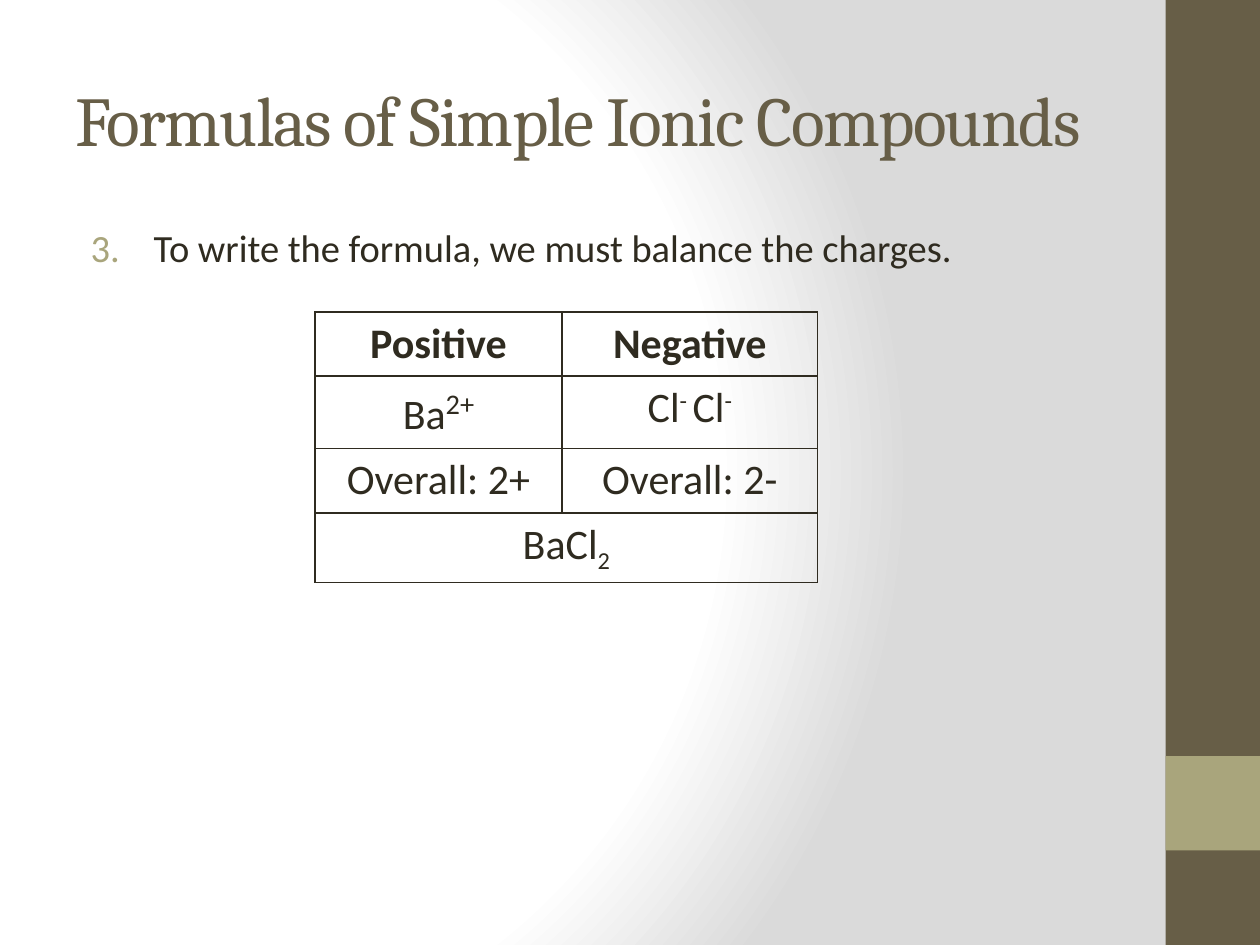
from lxml.etree import SubElement as Sub
from pptx import Presentation
from pptx.dml.color import RGBColor
from pptx.enum.shapes import MSO_SHAPE as Shape
from pptx.enum.text import MSO_ANCHOR as Anchor, MSO_AUTO_SIZE as Fit, PP_ALIGN as Align
from pptx.oxml import parse_xml
from pptx.oxml.ns import nsdecls, qn
from pptx.util import Inches, Pt

INK, BROWN, OLIVE = "2F2B20", "675E47", "A9A57C"
STOPS = [(0, "FFFFFF"), (75, "FFFFFF"), (100, "DADADA")]
UP, DOWN = 30, -25  # baseline shift in percent

# Each cell is a list of runs: text, baseline shift, size
ROWS = [
    [[("Positive", 0, 24)], [("Negative", 0, 24)]],
    [[("Ba", 0, 24), ("2+", UP, 28)],
     [("Cl", 0, 24), ("- ", UP, 24), ("Cl", 0, 24), ("-", UP, 24)]],
    [[("Overall: 2+", 0, 24)], [("Overall: 2-", 0, 24)]],
    [[("BaCl", 0, 24), ("2", DOWN, 24)]],
]


def color(code):
    return RGBColor.from_string(code)


class Deck:
    """Style and current slide; places are shares of the slide's size."""

    def __init__(self, wide, high):
        self.prs = Presentation()
        self.prs.slide_width, self.prs.slide_height = Inches(wide), Inches(high)
        self.slide = self.prs.slides.add_slide(self.prs.slide_layouts[1])

    def area(self, x, y, w, h):
        wide, high = self.prs.slide_width, self.prs.slide_height
        return [int(n) for n in (x * wide, y * high, w * wide, h * high)]

    def move(self, item, place):
        item.left, item.top, item.width, item.height = self.area(*place)

    def font(self, par, face, size, code, bold=None):
        font = par.font
        font.name, font.size, font.bold = face, Pt(size), bold
        font.color.rgb = color(code)

    def glow(self, stops):
        """Fill the background with a circular gradient."""
        marks = "".join(f'<a:gs pos="{pos * 1000}"><a:srgbClr val="{code}"/></a:gs>'
                        for pos, code in stops)
        back = parse_xml(
            f'<p:bg {nsdecls("p", "a")}><p:bgPr><a:gradFill rotWithShape="1">'
            f'<a:gsLst>{marks}</a:gsLst><a:path path="circle">'
            '<a:fillToRect l="20000" t="50000" r="100000" b="50000"/></a:path>'
            '</a:gradFill><a:effectLst/></p:bgPr></p:bg>')
        self.slide.element.cSld.insert(0, back)

    def band(self, place, code, depth):
        """Add a plain block at the given depth behind the text."""
        box = self.slide.shapes.add_shape(Shape.RECTANGLE, *self.area(*place))
        box.shadow.inherit = False
        box.fill.solid()
        box.fill.fore_color.rgb = color(code)
        box.line.fill.background()
        self.slide.shapes.element.insert(2 + depth, box.element)

    def title(self, text, place):
        item = self.slide.shapes.title
        self.move(item, place)
        frame = item.text_frame
        frame.auto_size, frame.vertical_anchor = Fit.NONE, Anchor.MIDDLE
        par = frame.paragraphs[0]
        par.alignment = Align.LEFT
        run = par.add_run()
        run.text = text
        self.font(par, "Cambria", 40, BROWN)
        run.font._element.set("spc", "-100")

    def steps(self, lines, place, start):
        """Fill in a numbered list that begins at start."""
        item = self.slide.placeholders[1]
        self.move(item, place)
        frame = item.text_frame
        frame.auto_size = Fit.NONE
        frame.text = "\n".join(lines)
        for par in frame.paragraphs:
            self.font(par, "Calibri", 22, INK)
            props = par._p.get_or_add_pPr()
            props.set("marL", str(Inches(0.62)))
            props.set("indent", str(Inches(-0.5)))
            tint = parse_xml(f'<a:buClr {nsdecls("a")}><a:srgbClr val="{OLIVE}"/></a:buClr>')
            number = parse_xml(f'<a:buAutoNum {nsdecls("a")} type="arabicPeriod" startAt="{start}"/>')
            props.insert(0, tint)
            props.insert(1, number)

    def edge(self, cell):
        """Draw a thin line on all four sides of a cell."""
        props = cell._tc.get_or_add_tcPr()
        for i, side in enumerate(("lnL", "lnR", "lnT", "lnB")):
            line = Sub(props, qn(f"a:{side}"), w=str(Pt(1)))
            Sub(Sub(line, qn("a:solidFill")), qn("a:srgbClr"), val=INK)
            props.insert(i, line)

    def label(self, cell, runs, bold):
        par = cell.text_frame.paragraphs[0]
        par.alignment = Align.CENTER
        self.font(par, "Calibri", 24, INK, bold)
        for text, shift, size in runs:
            run = par.add_run()
            run.text = text
            run.font.size = Pt(size)
            if shift:
                run.font._element.set("baseline", str(shift * 1000))

    def table(self, rows, place, widths, heights):
        """Add a table; a row with a single cell spans all columns."""
        count = len(widths)
        grid = self.slide.shapes.add_table(len(rows), count, *self.area(*place)).table
        grid.first_row = grid.horz_banding = False
        for col, width in zip(grid.columns, widths):
            col.width = Inches(width)
        for row, height in zip(grid.rows, heights):
            row.height = Inches(height)
        for cell in grid.iter_cells():
            cell.fill.background()
            self.edge(cell)
        for r, row in enumerate(rows):
            if len(row) < count:
                grid.cell(r, 0).merge(grid.cell(r, count - 1))
            for c, runs in enumerate(row):
                self.label(grid.cell(r, c), runs, r == 0)


def main():
    deck = Deck(10, 7.5)
    deck.glow(STOPS)
    deck.band((0.925, 0, 0.075, 1), BROWN, 0)
    deck.band((0.925, 0.8, 0.075, 0.1), OLIVE, 1)
    deck.title("Formulas of Simple Ionic Compounds", (0.05, 0.04, 0.885, 0.17))
    deck.steps(["To write the formula, we must balance the charges."],
               (0.05, 0.23, 0.83, 0.7), 3)
    deck.table(ROWS, (0.25, 0.33, 0.4, 0.29), (1.96, 2.03), (0.51, 0.57, 0.51, 0.55))
    deck.prs.save("out.pptx")


if __name__ == "__main__":
    main()
